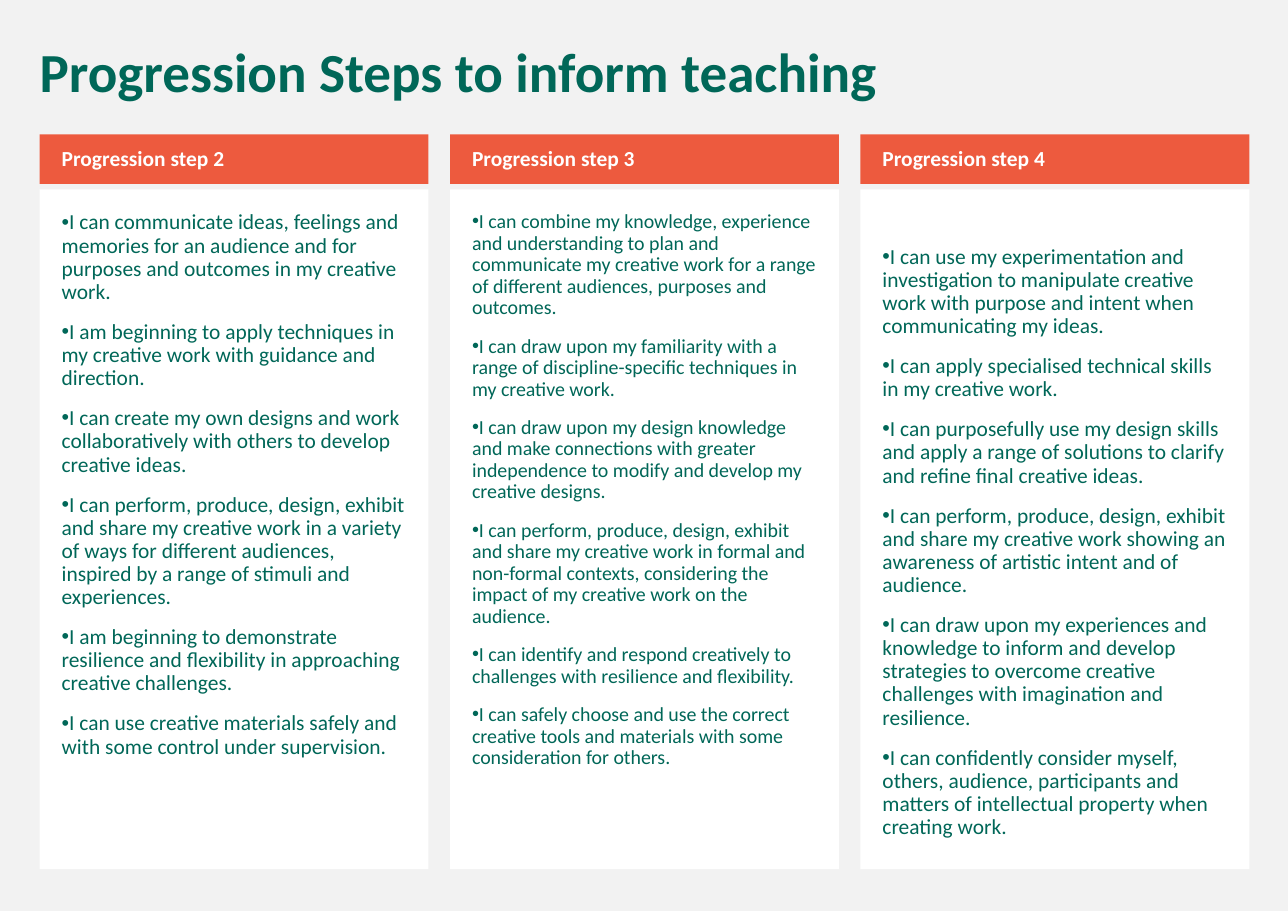
from dataclasses import dataclass

import lxml.etree
import pptx
import pptx.dml.color
import pptx.enum.shapes
import pptx.enum.text
import pptx.oxml.ns
import pptx.shapes.autoshape
import pptx.slide
import pptx.text.text
import pptx.util

Inches = pptx.util.Inches
Anchor = pptx.enum.text.MSO_ANCHOR


@dataclass(frozen=True)
class Theme:
    page: str = "F2F2F2"
    panel: str = "FFFFFF"
    green: str = "006758"
    orange: str = "ED5A3E"
    white: str = "FFFFFF"
    font: str = "Calibri"
    dot_font: str = "Arial"
    title: int = 36
    head: int = 14
    gap: int = 11
    line: float = 0.9


@dataclass(frozen=True)
class Step:
    head: str
    size: int
    top: float
    goals: tuple[str, ...]


@dataclass(frozen=True)
class Box:
    left: float
    top: float
    width: float
    height: float


THEME = Theme()
WIDTH, HEIGHT = 11.69, 8.27
FIRST, LAST = 0.36, 7.81
STEPS = (
    Step("Progression step 2", 14, 0.2, (
        "I can communicate ideas, feelings and memories for an audience and for purposes and outcomes in my creative work.",
        "I am beginning to apply techniques in my creative work with guidance and direction.",
        "I can create my own designs and work collaboratively with others to develop creative ideas.",
        "I can perform, produce, design, exhibit and share my creative work in a variety of ways for different audiences, inspired by a range of stimuli and experiences.",
        "I am beginning to demonstrate resilience and flexibility in approaching creative challenges.",
        "I can use creative materials safely and with some control under supervision.",
    )),
    Step("Progression step 3", 13, 0.2, (
        "I can combine my knowledge, experience and understanding to plan and communicate my creative work for a range of different audiences, purposes and outcomes.",
        "I can draw upon my familiarity with a range of discipline-specific techniques in my creative work.",
        "I can draw upon my design knowledge and make connections with greater independence to modify and develop my creative designs.",
        "I can perform, produce, design, exhibit and share my creative work in formal and non-formal contexts, considering the impact of my creative work on the audience.",
        "I can identify and respond creatively to challenges with resilience and flexibility.",
        "I can safely choose and use the correct creative tools and materials with some consideration for others.",
    )),
    Step("Progression step 4", 14, 0.51, (
        "I can use my experimentation and investigation to manipulate creative work with purpose and intent when communicating my ideas.",
        "I can apply specialised technical skills in my creative work.",
        "I can purposefully use my design skills and apply a range of solutions to clarify and refine final creative ideas.",
        "I can perform, produce, design, exhibit and share my creative work showing an awareness of artistic intent and of audience.",
        "I can draw upon my experiences and knowledge to inform and develop strategies to overcome creative challenges with imagination and resilience.",
        "I can confidently consider myself, others, audience, participants and matters of intellectual property when creating work.",
    )),
)


def rgb(code: str) -> pptx.dml.color.RGBColor:
    return pptx.dml.color.RGBColor.from_string(code)


def style(par: pptx.text.text._Paragraph, size: int, color: str, bold: bool = False) -> None:
    par.alignment = pptx.enum.text.PP_ALIGN.LEFT
    par.line_spacing = THEME.line
    par.font.name = THEME.font
    par.font.size = pptx.util.Pt(size)
    par.font.bold = bold
    par.font.color.rgb = rgb(color)


def add_dot(par: pptx.text.text._Paragraph) -> None:
    """Give the paragraph a bullet that touches its text."""
    props = par._p.get_or_add_pPr()
    props.set("marL", "0")
    props.set("indent", "0")
    qn = pptx.oxml.ns.qn
    lxml.etree.SubElement(props, qn("a:buFont"), typeface=THEME.dot_font)
    lxml.etree.SubElement(props, qn("a:buChar"), char="•")


def set_frame(frame: pptx.text.text.TextFrame, anchor: Anchor,
              left: float, top: float, right: float, base: float) -> None:
    frame.word_wrap = True
    frame.auto_size = pptx.enum.text.MSO_AUTO_SIZE.NONE
    frame.vertical_anchor = anchor
    frame.margin_left, frame.margin_top = Inches(left), Inches(top)
    frame.margin_right, frame.margin_bottom = Inches(right), Inches(base)


def add_block(slide: pptx.slide.Slide, box: Box, fill: str) -> pptx.shapes.autoshape.Shape:
    block = slide.shapes.add_shape(
        pptx.enum.shapes.MSO_SHAPE.RECTANGLE,
        Inches(box.left), Inches(box.top), Inches(box.width), Inches(box.height))
    block.shadow.inherit = False
    block.fill.solid()
    block.fill.fore_color.rgb = rgb(fill)
    block.line.fill.background()
    return block


def add_title(slide: pptx.slide.Slide, text: str) -> None:
    title = slide.shapes.title
    title.left, title.top = Inches(0.26), Inches(0.36)
    title.width, title.height = Inches(11.08), Inches(0.65)
    frame = title.text_frame
    set_frame(frame, Anchor.TOP, 0.1, 0.05, 0.1, 0.05)
    frame.text = text
    style(frame.paragraphs[0], THEME.title, THEME.green, bold=True)


def add_step(slide: pptx.slide.Slide, step: Step, left: float) -> None:
    panel = add_block(slide, Box(left, 1.72, 3.53, 6.17), THEME.panel).text_frame
    set_frame(panel, Anchor.TOP, 0.2, step.top, 0.2, 0.2)
    panel.text = "\n".join(step.goals)
    for par in panel.paragraphs:
        add_dot(par)
        style(par, step.size, THEME.green)
        par.space_before = pptx.util.Pt(THEME.gap)

    head = add_block(slide, Box(left, 1.22, 3.53, 0.45), THEME.orange).text_frame
    set_frame(head, Anchor.MIDDLE, 0.2, 0.05, 0.1, 0.05)
    head.text = step.head
    style(head.paragraphs[0], THEME.head, THEME.white, bold=True)


def main() -> None:
    deck = pptx.Presentation()
    deck.slide_width, deck.slide_height = Inches(WIDTH), Inches(HEIGHT)
    slide = deck.slides.add_slide(deck.slide_layouts.get_by_name("Title Only"))
    slide.background.fill.solid()
    slide.background.fill.fore_color.rgb = rgb(THEME.page)
    add_title(slide, "Progression Steps to inform teaching")
    pitch = (LAST - FIRST) / (len(STEPS) - 1)
    for index, step in enumerate(STEPS):
        add_step(slide, step, FIRST + index * pitch)
    deck.save("out.pptx")


if __name__ == "__main__":
    main()
